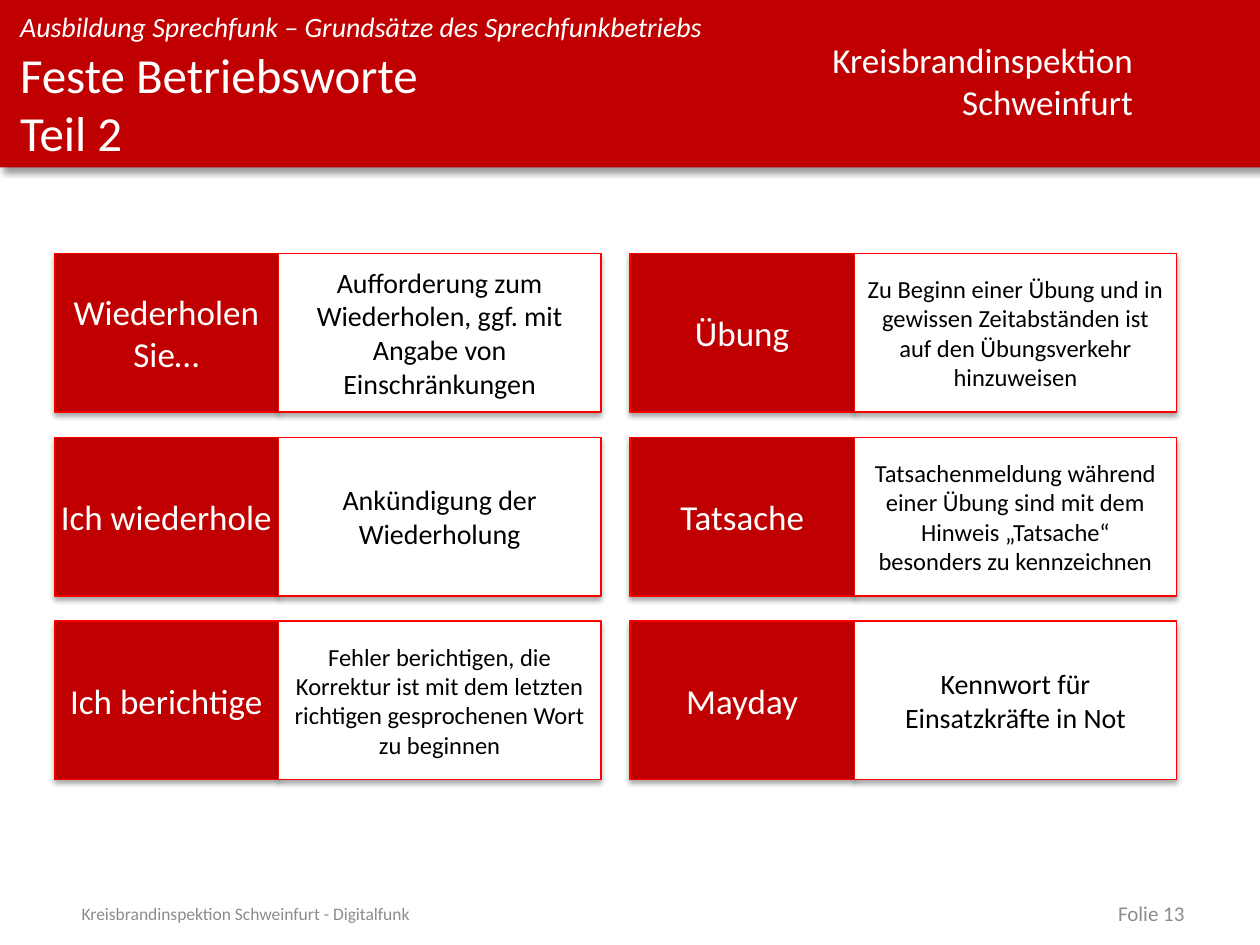
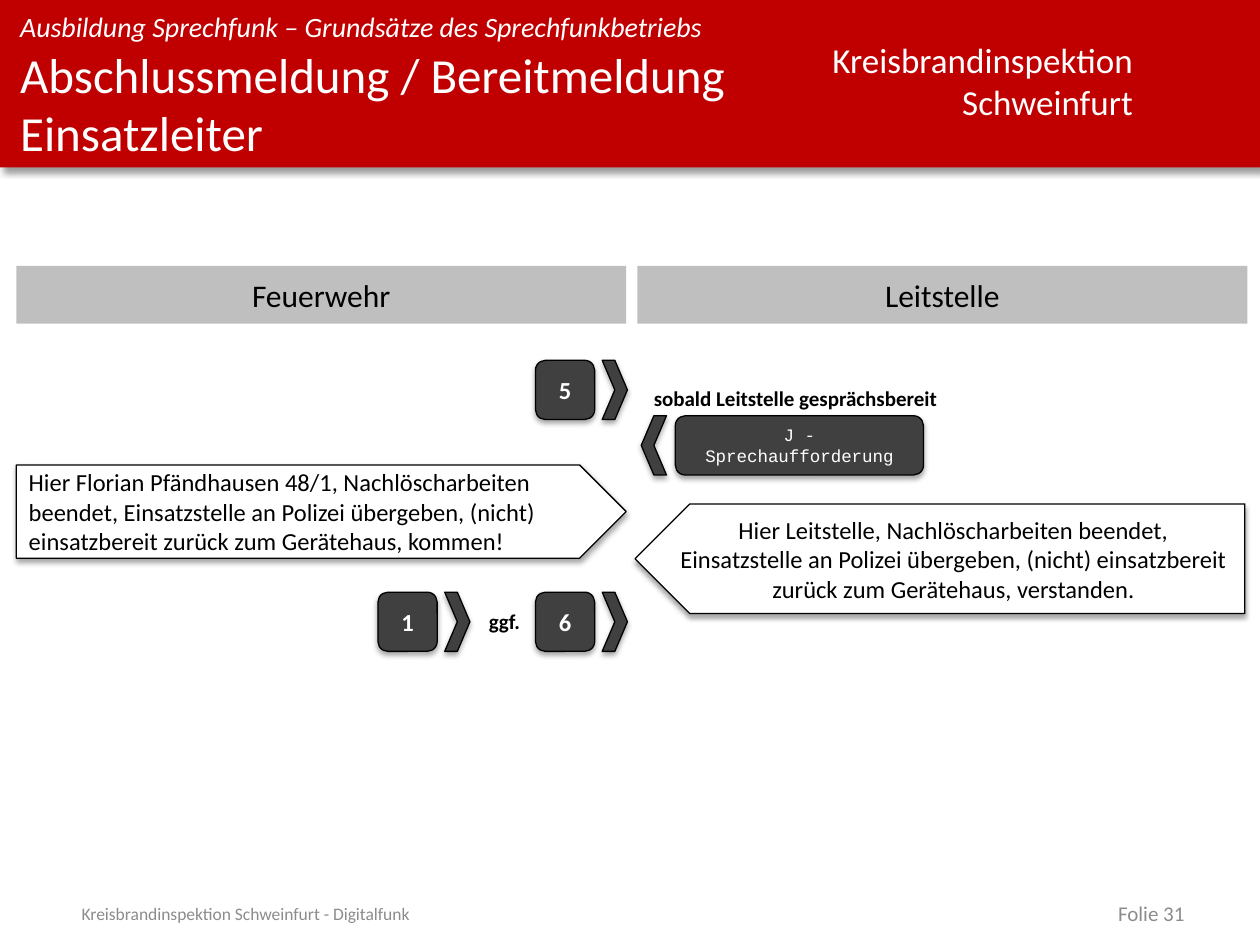
from dataclasses import dataclass
from typing import Any, NamedTuple, Optional

from lxml import etree
from pptx import Presentation
from pptx import util as u
from pptx.dml.color import RGBColor
from pptx.enum import shapes, text
from pptx.oxml.ns import qn

EMU = 9144
WHITE = RGBColor(255, 255, 255)
BLACK = RGBColor(0, 0, 0)
RED = RGBColor(0xC0, 0, 0)
EDGE = RGBColor(255, 0, 0)
GREY = RGBColor(0xBF, 0xBF, 0xBF)
DARK = RGBColor(0x40, 0x40, 0x40)
FAINT = RGBColor(0x8C, 0x8C, 0x8C)

KIND = shapes.MSO_SHAPE
LEFT, MID, RIGHT = text.PP_ALIGN.LEFT, text.PP_ALIGN.CENTER, text.PP_ALIGN.RIGHT
TOP, CENTRE = text.MSO_ANCHOR.TOP, text.MSO_ANCHOR.MIDDLE


class Shade(NamedTuple):
    alpha: int
    blur: float
    dist: float
    angle: int


SOFT = Shade(35, 3.1, 1.8, 90)
DEEP = Shade(40, 4, 3, 45)


@dataclass(frozen=True)
class Style:
    size: int
    ink: RGBColor = BLACK
    align: Any = LEFT
    anchor: Any = CENTRE
    pad: tuple[int, int] = (10, 5)
    wrap: bool = True
    bold: bool = False
    slant: bool = False
    font: str = "Calibri"


@dataclass(frozen=True)
class Look:
    kind: Any
    fill: RGBColor
    line: Optional[RGBColor] = None
    shade: Optional[Shade] = None
    flip: bool = False


class Area(NamedTuple):
    x: int
    y: int
    w: int
    h: int


class Term(NamedTuple):
    word: str
    sense: str
    size: int


class Key(NamedTuple):
    x: int
    y: int
    digit: str


BAND = Look(KIND.RECTANGLE, RED, shade=DEEP)
NAME = Look(KIND.RECTANGLE, RED, EDGE, SOFT)
SENSE = Look(KIND.RECTANGLE, WHITE, EDGE, SOFT)
HEAD = Look(KIND.RECTANGLE, GREY)
KEY = Look(KIND.ROUNDED_RECTANGLE, DARK, BLACK, SOFT)
NEXT = Look(KIND.CHEVRON, DARK, BLACK, SOFT)
BACK = Look(KIND.CHEVRON, DARK, BLACK, SOFT, flip=True)
CALL = Look(KIND.PENTAGON, WHITE, BLACK, SOFT)
REPLY = Look(KIND.PENTAGON, WHITE, BLACK, SOFT, flip=True)

TITLE = Style(28, WHITE, anchor=TOP, pad=(0, 0))
TOPIC = Style(16, WHITE, anchor=TOP, pad=(0, 0), slant=True)
OWNER = Style(20, WHITE, RIGHT, TOP, wrap=False)
FOOT = Style(10, FAINT)
PAGE = Style(12, FAINT, RIGHT)
WORD = Style(20, WHITE, MID, pad=(4, 4))
SIDE = Style(18, align=MID, anchor=TOP, pad=(8, 8), wrap=False)
DIGIT = Style(14, WHITE, MID, bold=True)
CODE = Style(10, WHITE, MID, font="Courier New")
NOTE = Style(12, anchor=TOP, wrap=False, bold=True)
HINT = Style(12, anchor=TOP, pad=(0, 0), wrap=False, bold=True)

TERMS = [
    Term("Wiederholen Sie…", "Aufforderung zum Wiederholen, ggf. mit Angabe von Einschränkungen", 16),
    Term("Ich wiederhole", "Ankündigung der Wiederholung", 16),
    Term("Ich berichtige", "Fehler berichtigen, die Korrektur ist mit dem letzten richtigen "
         "gesprochenen Wort zu beginnen", 14),
    Term("Übung", "Zu Beginn einer Übung und in gewissen Zeitabständen ist auf den "
         "Übungsverkehr hinzuweisen", 14),
    Term("Tatsache", "Tatsachenmeldung während einer Übung sind mit dem Hinweis „Tatsache“ "
         "besonders zu kennzeichnen", 14),
    Term("Mayday", "Kennwort für Einsatzkräfte in Not", 16),
]
KEYS = [Key(425, 286, "5"), Key(425, 470, "6"), Key(300, 470, "1")]


def place(area: Area) -> list[u.Emu]:
    return [u.Emu(n * EMU) for n in area]


def cast(shape: Any, shade: Shade) -> None:
    effects = shape._element.spPr.find(qn("a:effectLst"))
    outer = etree.SubElement(effects, qn("a:outerShdw"), blurRad=str(u.Pt(shade.blur)),
                             dist=str(u.Pt(shade.dist)), dir=str(shade.angle * 60000),
                             algn="tl", rotWithShape="0")
    tone = etree.SubElement(outer, qn("a:srgbClr"), val=str(BLACK))
    etree.SubElement(tone, qn("a:alpha"), val=str(shade.alpha * 1000))


def write(shape: Any, lines: tuple[str, ...], style: Style) -> None:
    frame = shape.text_frame
    frame.word_wrap = style.wrap
    frame.vertical_anchor = style.anchor
    across, down = (u.Emu(n * EMU) for n in style.pad)
    frame.margin_left = frame.margin_right = across
    frame.margin_top = frame.margin_bottom = down
    for i, line in enumerate(lines):
        para = frame.add_paragraph() if i else frame.paragraphs[0]
        para.text = line
        para.alignment = style.align
        font = para.font
        font.name, font.size = style.font, u.Pt(style.size)
        font.bold, font.italic = style.bold, style.slant
        font.color.rgb = style.ink


def label(tree: Any, area: Area, style: Style, *lines: str) -> None:
    write(tree.add_textbox(*place(area)), lines, style)


def draw(tree: Any, area: Area, look: Look, style: Optional[Style] = None, *lines: str) -> None:
    shape = tree.add_shape(look.kind, *place(area))
    shape.shadow.inherit = False
    shape.fill.solid()
    shape.fill.fore_color.rgb = look.fill
    if look.line is None:
        shape.line.fill.background()
    else:
        shape.line.color.rgb = look.line
        shape.line.width = u.Pt(0.75)
    if look.shade:
        cast(shape, look.shade)
    if look.flip:
        shape._element.spPr.find(qn("a:xfrm")).set("flipH", "1")
    if style:
        write(shape, lines, style)


def start(deck: Any, title: str, page: int) -> Any:
    tree = deck.slides.add_slide(deck.slide_layouts[6]).shapes
    draw(tree, Area(0, 0, 1000, 133), BAND)
    label(tree, Area(648, 26, 261, 77), OWNER, "Kreisbrandinspektion", "Schweinfurt")
    label(tree, Area(16, 8, 632, 27), TOPIC,
          "Ausbildung Sprechfunk – Grundsätze des Sprechfunkbetriebs")
    label(tree, Area(16, 35, 632, 99), TITLE, title)
    label(tree, Area(55, 715, 604, 20), FOOT, "Kreisbrandinspektion Schweinfurt - Digitalfunk")
    label(tree, Area(717, 715, 233, 20), PAGE, f"Folie {page}")
    return tree


def words(deck: Any) -> None:
    tree = start(deck, "Feste Betriebsworte\nTeil 2", 13)
    for i, term in enumerate(TERMS):
        col, row = divmod(i, 3)
        x, y = 43 + 457 * col, 201 + 146 * row
        pair = tree.add_group_shape().shapes
        draw(pair, Area(x, y, 178, 126), NAME, WORD, term.word)
        draw(pair, Area(x + 178, y, 256, 126), SENSE, Style(term.size, align=MID), term.sense)


def report(deck: Any) -> None:
    tree = start(deck, "Abschlussmeldung / Bereitmeldung\nEinsatzleiter", 31)
    for x, side in ((13, "Feuerwehr"), (506, "Leitstelle")):
        draw(tree, Area(x, 211, 484, 46), HEAD, SIDE, side)
    for key in KEYS:
        pair = tree.add_group_shape().shapes
        draw(pair, Area(key.x, key.y, 47, 47), KEY, DIGIT, key.digit)
        draw(pair, Area(key.x + 53, key.y, 20, 47), NEXT)
    draw(tree, Area(509, 330, 20, 47), BACK)
    draw(tree, Area(536, 330, 197, 47), KEY, CODE, "J - Sprechaufforderung")
    label(tree, Area(509, 301, 252, 30), NOTE, "sobald Leitstelle gesprächsbereit")
    draw(tree, Area(13, 369, 484, 74), CALL, Style(14),
         "Hier Florian Pfändhausen 48/1, Nachlöscharbeiten beendet, Einsatzstelle an Polizei "
         "übergeben, (nicht) einsatzbereit zurück zum Gerätehaus, kommen!")
    draw(tree, Area(504, 400, 484, 87), REPLY, Style(14, align=MID),
         "Hier Leitstelle, Nachlöscharbeiten beendet, Einsatzstelle an Polizei übergeben, "
         "(nicht) einsatzbereit zurück zum Gerätehaus, verstanden.")
    label(tree, Area(388, 483, 25, 20), HINT, "ggf.")


def main() -> None:
    deck = Presentation()
    deck.slide_width, deck.slide_height = u.Emu(1000 * EMU), u.Emu(750 * EMU)
    words(deck)
    report(deck)
    deck.save("out.pptx")


if __name__ == "__main__":
    main()
